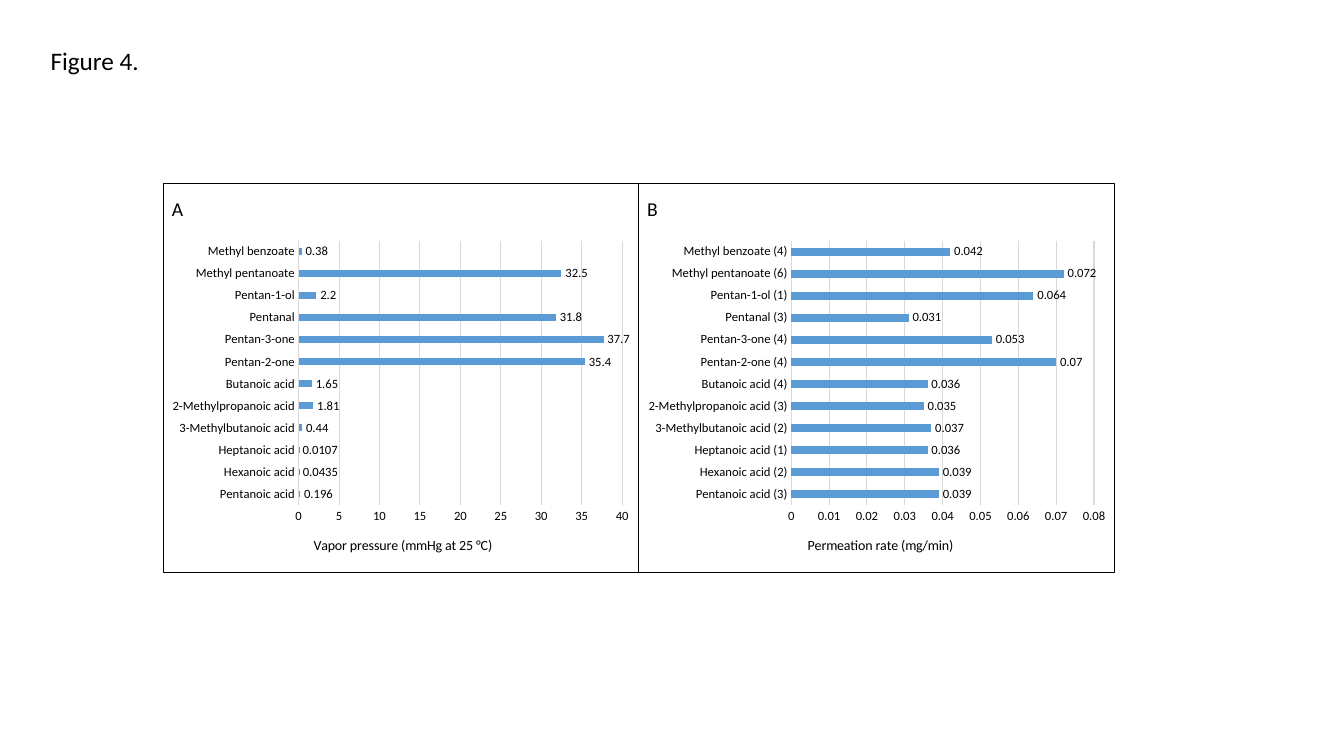
from lxml.etree import SubElement
from pptx import Presentation
from pptx.chart.data import CategoryChartData
from pptx.dml.color import RGBColor
from pptx.enum.chart import XL_CHART_TYPE, XL_LABEL_POSITION, XL_TICK_MARK
from pptx.enum.text import MSO_ANCHOR, MSO_AUTO_SIZE, PP_ALIGN
from pptx.oxml import parse_xml
from pptx.oxml.ns import nsdecls, qn
from pptx.util import Cm, Pt

ACIDS = ["Pentanoic acid", "Hexanoic acid", "Heptanoic acid",
         "3-Methylbutanoic acid", "2-Methylpropanoic acid", "Butanoic acid",
         "Pentan-2-one", "Pentan-3-one", "Pentanal", "Pentan-1-ol",
         "Methyl pentanoate", "Methyl benzoate"]
COUNTS = [3, 2, 1, 2, 3, 4, 4, 4, 3, 1, 6, 4]
VAPOR = [0.196, 0.0435, 0.0107, 0.44, 1.81, 1.65,
         35.4, 37.7, 31.8, 2.2, 32.5, 0.38]
RATES = [0.039, 0.039, 0.036, 0.037, 0.035, 0.036,
         0.07, 0.053, 0.031, 0.064, 0.072, 0.042]


def color(code):
    return RGBColor.from_string(code)


def place(node, index, **parts):
    """Give a chart part a manual layout in fractions of the chart."""
    for old in node.findall(qn("c:layout")):
        node.remove(old)
    layout = parse_xml(f"<c:layout {nsdecls('c')}/>")
    manual = SubElement(layout, qn("c:manualLayout"))
    if "w" in parts:
        SubElement(manual, qn("c:layoutTarget")).set("val", "inner")
    for mode in ("xMode", "yMode"):
        SubElement(manual, qn(f"c:{mode}")).set("val", "edge")
    for key, val in parts.items():
        SubElement(manual, qn(f"c:{key}")).set("val", str(val))
    node.insert(index, layout)


class Deck:
    font = "Calibri"
    ink = "000000"
    rule = "D9D9D9"
    bar = "5B9BD5"

    def __init__(self):
        self.show = Presentation()
        self.show.slide_width, self.show.slide_height = Cm(33.86), Cm(19.05)
        self.slide = self.show.slides.add_slide(self.show.slide_layouts[5])

    def style(self, font, size):
        font.name, font.size, font.bold = self.font, Pt(size), False
        font.color.rgb = color(self.ink)

    def label(self, frame, text, size=10, align=None):
        frame.text = text
        para = frame.paragraphs[0]
        para.alignment = align
        self.style(para.runs[0].font, size)

    def title(self, text, left, top, width, height):
        box = self.slide.shapes.title
        box.left, box.top = Cm(left), Cm(top)
        box.width, box.height = Cm(width), Cm(height)
        frame = box.text_frame
        frame.word_wrap = False
        frame.auto_size = MSO_AUTO_SIZE.NONE
        frame.vertical_anchor = MSO_ANCHOR.MIDDLE
        self.label(frame, text, size=18, align=PP_ALIGN.LEFT)

    def border(self, chart):
        chart._chartSpace.find(qn("c:chart")).addnext(parse_xml(
            f'<c:spPr {nsdecls("c", "a")}><a:noFill/><a:ln w="9525">'
            f'<a:solidFill><a:srgbClr val="{self.ink}"/></a:solidFill>'
            '</a:ln></c:spPr>'))

    def axes(self, chart, unit, top, step):
        cats, vals = chart.category_axis, chart.value_axis
        for axis in (cats, vals):
            axis.major_tick_mark = axis.minor_tick_mark = XL_TICK_MARK.NONE
            self.style(axis.tick_labels.font, 9)
        vals.minimum_scale, vals.maximum_scale = 0, top
        vals.major_unit = step
        vals.tick_labels.number_format = "General"
        vals.tick_labels.number_format_is_linked = False
        vals.format.line.fill.background()
        vals.has_major_gridlines = True
        for line in (cats.format.line, vals.major_gridlines.format.line):
            line.color.rgb, line.width = color(self.rule), Pt(0.75)
        self.label(vals.axis_title.text_frame, unit)

    def bars(self, name, left, cats, nums, unit, top, step, gap, plot, mark):
        data = CategoryChartData()
        data.categories = cats
        data.add_series("Series 1", nums)
        chart = self.slide.shapes.add_chart(
            XL_CHART_TYPE.BAR_CLUSTERED, Cm(left), Cm(4.62), Cm(12),
            Cm(9.83), data).chart
        self.style(chart.font, 10)
        self.border(chart)
        chart.has_legend = False
        self.axes(chart, unit, top, step)
        self.label(chart.chart_title.text_frame, name, size=14)
        head = chart.chart_title._element
        head.find(qn("c:overlay")).set("val", "1")
        place(head, 1, x=0.01, y=0.02)
        place(chart.value_axis.axis_title._element, 1, x=mark, y=0.9)
        area = chart._chartSpace.find(qn("c:chart")).find(qn("c:plotArea"))
        place(area, 0, x=plot[0], y=0.146, w=plot[1], h=0.68)
        group = chart.plots[0]
        group.gap_width, group.vary_by_categories = gap, False
        fill = group.series[0].format.fill
        fill.solid()
        fill.fore_color.rgb = color(self.bar)
        tags = group.series[0].data_labels
        tags.show_value = True
        tags.position = XL_LABEL_POSITION.OUTSIDE_END
        self.style(tags.font, 9)


def main():
    deck = Deck()
    deck.title("Figure 4.", 1.02, 1.02, 2.77, 1.02)
    deck.bars("A", 4.11, ACIDS, VAPOR, "Vapor pressure (mmHg at 25 °C)",
              top=40, step=5, gap=219, plot=(0.284, 0.681), mark=0.31)
    deck.bars("B", 16.08, [f"{a} ({n})" for a, n in zip(ACIDS, COUNTS)],
              RATES, "Permeation rate (mg/min)",
              top=0.08, step=0.01, gap=182, plot=(0.321, 0.637), mark=0.35)
    deck.show.save("out.pptx")


if __name__ == "__main__":
    main()
